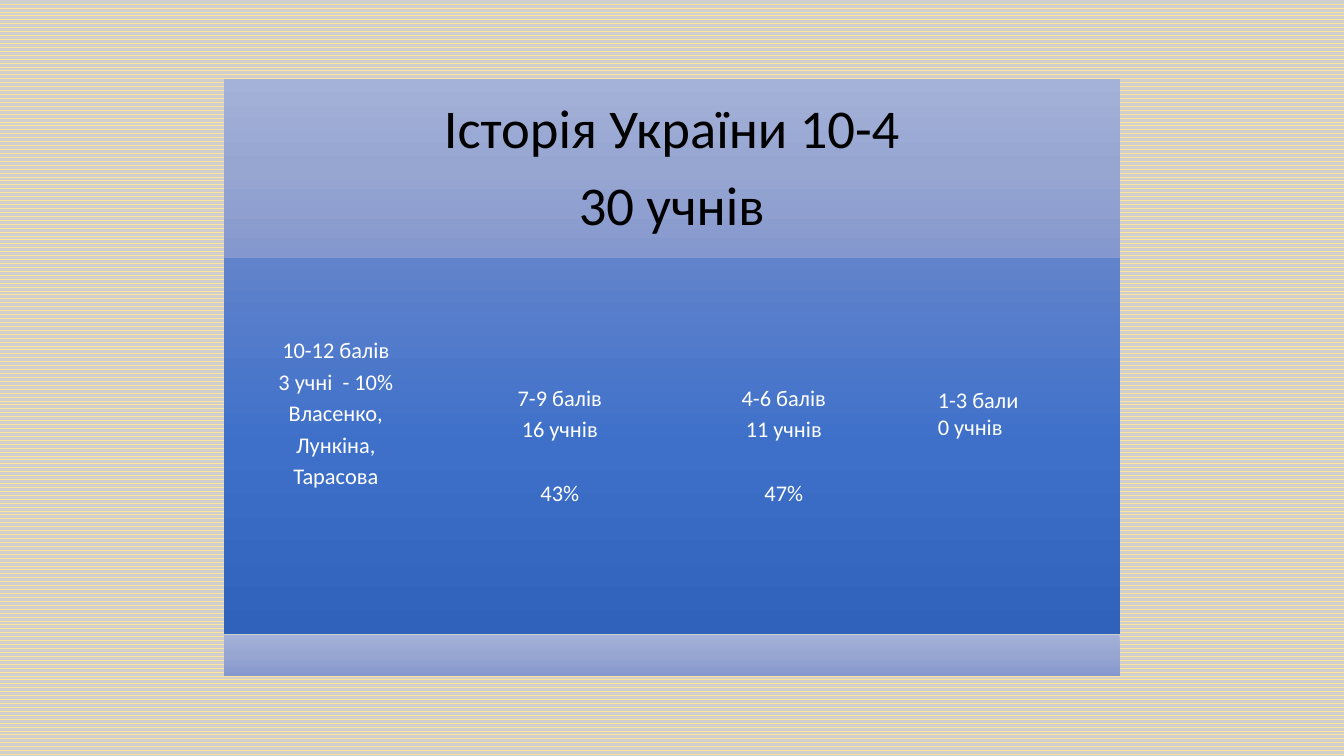
from copy import deepcopy
from dataclasses import dataclass

from pptx import Presentation
from pptx.dml.color import RGBColor as Rgb
from pptx.enum.dml import MSO_PATTERN as Pattern
from pptx.enum.shapes import MSO_SHAPE as Shape
from pptx.enum.text import MSO_ANCHOR as Anchor, MSO_AUTO_SIZE as Fit, PP_ALIGN as Align
from pptx.util import Cm, Pt


@dataclass(frozen=True)
class Theme:
    font: str = "Calibri"
    head: int = 39
    body: int = 16
    black: str = "000000"
    white: str = "FFFFFF"
    wave: str = "FFE699"
    back: str = "D0CECE"
    pale: tuple = ("A4B2D9", "97A6D1", "8497CE")
    deep: tuple = ("6183CB", "3E70CA", "3062BB")


THEME = Theme()
RATIO = 0.33  # paragraph gap as a share of the type size
LINE = 22.9   # height of one body line with its gap, in points


def shade(shape, colors):
    """Fill from top to bottom with three colours and no outline."""
    fill = shape.fill
    fill.gradient()
    fill.gradient_angle = 270
    first = shape._element.spPr.xpath(".//a:gs")[0]
    first.addnext(deepcopy(first))
    for stop, color, place in zip(fill.gradient_stops, colors, (0, 0.5, 1)):
        stop.color.rgb = Rgb.from_string(color)
        stop.position = place
    shape.line.fill.background()


def write(shape, lines, size=THEME.body, color=THEME.white, align=Align.CENTER,
          anchor=Anchor.MIDDLE, inset=0.18, lift=0, gap=RATIO, space=0.9,
          wrap=True, breaks=()):
    """Set text lines; breaks lists the lines followed by an extra line of space."""
    frame = shape.text_frame
    frame.auto_size = Fit.NONE
    frame.word_wrap = wrap
    frame.vertical_anchor = anchor
    frame.margin_left = frame.margin_right = frame.margin_top = Cm(inset)
    frame.margin_bottom = Cm(inset) + Pt(lift)
    frame.text = "\n".join(lines)
    for i, para in enumerate(frame.paragraphs):
        para.alignment = align
        para.line_spacing = space
        para.space_before = Pt(0)
        para.space_after = Pt(size * gap + (LINE if i in breaks else 0))
        font = para.runs[0].font
        font.name, font.size = THEME.font, Pt(size)
        font.color.rgb = Rgb.from_string(color)


def panel(slide, x, y, w, h, colors):
    shape = slide.shapes.add_shape(Shape.RECTANGLE, Cm(x), Cm(y), Cm(w), Cm(h))
    shape.shadow.inherit = False
    shade(shape, colors)
    return shape


def header(slide, x, y, w, h):
    title = slide.shapes.title
    title.left, title.top, title.width, title.height = Cm(x), Cm(y), Cm(w), Cm(h)
    shade(title, THEME.pale)
    write(title, ["Історія України 10-4", "30 учнів"], size=THEME.head,
          color=THEME.black, inset=0.41)


def grades(slide, x, y, w, h):
    groups = [
        (["10-12 балів", "3 учні  - 10%", "Власенко,", "Лункіна,", "Тарасова"],
         {"lift": 2 * LINE}),
        (["7-9 балів", "16 учнів", "43%"], {"breaks": (1,)}),
        (["4-6 балів", "11 учнів", "47%"], {"breaks": (1,)}),
        ([], {}),
    ]
    step = w / len(groups)
    for i, (lines, form) in enumerate(groups):
        cell = panel(slide, x + i * step, y, step, h, THEME.deep)
        if lines:
            write(cell, lines, **form)

    # Lowest grades, set in a free label over the last column
    label = slide.shapes.add_textbox(Cm(x + 3 * step + 0.81), Cm(y + 2.97),
                                     Cm(2.57), Cm(1.63))
    write(label, ["1-3 бали", "0 учнів"], align=Align.LEFT, anchor=Anchor.TOP,
          inset=0.25, gap=0, space=1, wrap=False)


def report(slide, x, y, w):
    top, mid, foot = 4.51, 9.48, 1.05
    header(slide, x, y, w, top)
    grades(slide, x, y + top, w, mid)
    panel(slide, x, y + top + mid, w, foot, THEME.pale)


def main():
    deck = Presentation()
    deck.slide_width, deck.slide_height = Cm(33.87), Cm(19.05)
    slide = deck.slides.add_slide(deck.slide_layouts[5])

    # Patterned backdrop
    fill = slide.background.fill
    fill.patterned()
    fill.pattern = Pattern.WAVE
    fill.fore_color.rgb = Rgb.from_string(THEME.wave)
    fill.back_color.rgb = Rgb.from_string(THEME.back)

    report(slide, 5.64, 2, 22.58)
    deck.save("out.pptx")


if __name__ == "__main__":
    main()
